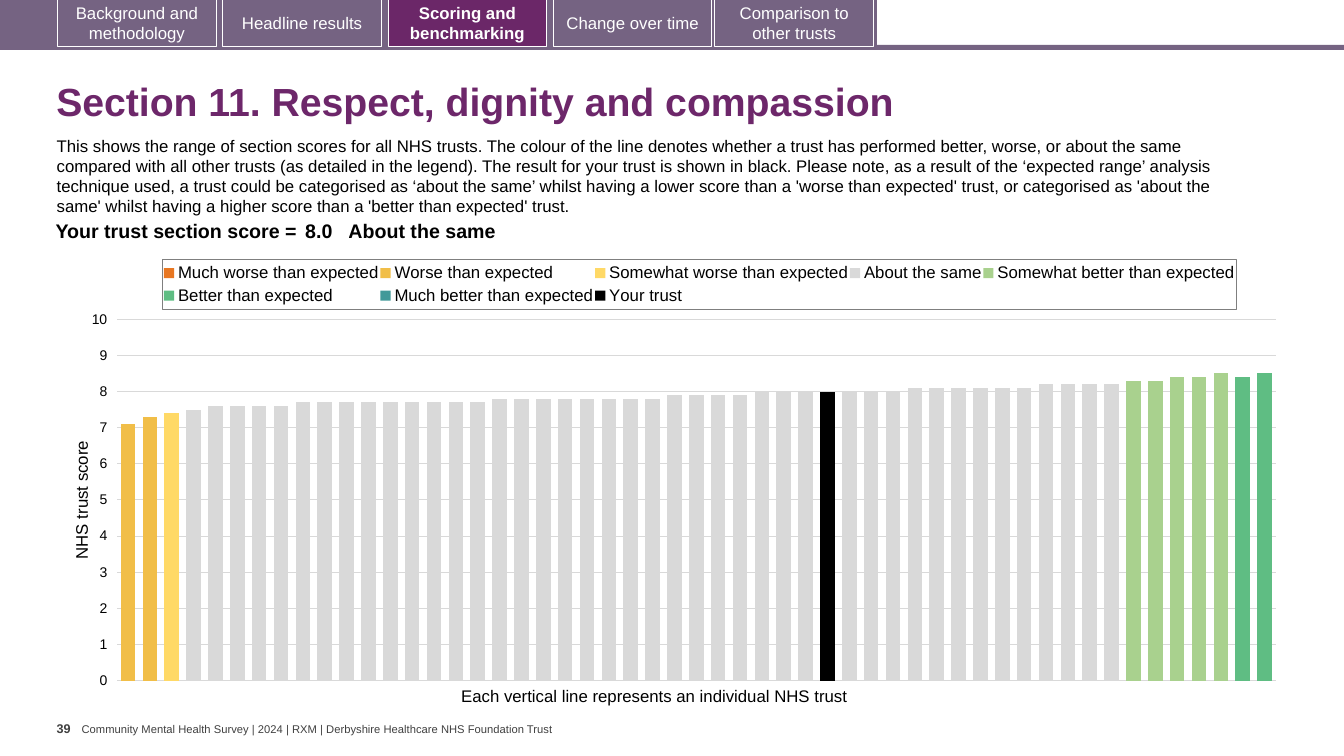
from copy import deepcopy
from lxml.etree import SubElement
from pptx import Presentation
from pptx.chart.data import CategoryChartData
from pptx.dml.color import RGBColor
from pptx.enum.chart import (XL_CHART_TYPE, XL_LEGEND_POSITION, XL_TICK_LABEL_POSITION,
                             XL_TICK_MARK)
from pptx.enum.shapes import MSO_SHAPE
from pptx.enum.text import MSO_ANCHOR, PP_ALIGN
from pptx.oxml import parse_xml
from pptx.oxml.ns import nsdecls, qn
from pptx.util import Pt

PLUM, MAUVE, BLACK, WHITE, GREY = "6D276A", "756382", "000000", "FFFFFF", "404040"


def paint(fill, hue):
    fill.solid()
    fill.fore_color.rgb = RGBColor.from_string(hue)


def style(font, size, hue, bold=False):
    font.name, font.size, font.bold = "Arial", Pt(size), bold
    paint(font.fill, hue)


deck = Presentation()
deck.slide_width, deck.slide_height = Pt(960), Pt(540)
slide = deck.slides.add_slide(deck.slide_layouts[5])
shapes = slide.shapes

# Navigation strip and tabs
bands = [(0, 32, 960, 3.6), (0, 0, 626.4, 33.8)]
for band in bands:
    strip = shapes.add_shape(MSO_SHAPE.RECTANGLE, *map(Pt, band))
    strip.shadow.inherit = False
    paint(strip.fill, MAUVE)
    strip.line.fill.background()

tabs = [
    (41.2, "Background and methodology"),
    (159.2, "Headline results"),
    (277.2, "Scoring and benchmarking"),
    (395.3, "Change over time"),
    (510.7, "Comparison to other trusts"),
]
for left, label in tabs:
    active = label == "Scoring and benchmarking"
    tab = shapes.add_shape(MSO_SHAPE.RECTANGLE, Pt(left), Pt(-0.7), Pt(113.3), Pt(33.8))
    tab.shadow.inherit = False
    paint(tab.fill, "6B2768" if active else MAUVE)
    paint(tab.line.fill, WHITE)
    tab.line.width = Pt(0.75)
    tab.text_frame.vertical_anchor = MSO_ANCHOR.MIDDLE
    para = tab.text_frame.paragraphs[0]
    para.alignment = PP_ALIGN.CENTER
    run = para.add_run()
    run.text = label
    style(run.font, 12, WHITE, active)

# Title
title = shapes.title
title.left, title.top, title.width, title.height = Pt(33), Pt(48.2), Pt(899), Pt(52)
title.text_frame.vertical_anchor = MSO_ANCHOR.MIDDLE
para = title.text_frame.paragraphs[0]
para.alignment = PP_ALIGN.LEFT
para.line_spacing = 0.9
run = para.add_run()
run.text = "Section 11. Respect, dignity and compassion"
style(run.font, 28, PLUM, True)

# Chart
trusts = 53
same = ([7.5] + [7.6] * 4 + [7.7] * 9 + [7.8] * 8 + [7.9] * 4
        + [8.0] * 7 + [8.1] * 6 + [8.2] * 4)
# Name, colour, number of trusts before the first bar, scores
groups = [
    ("Much worse than expected", "E87722", 0, []),
    ("Worse than expected", "F1BE48", 0, [7.1, 7.3]),
    ("Somewhat worse than expected", "FFD966", 2, [7.4]),
    ("About the same", "D9D9D9", 3, same),
    ("Somewhat better than expected", "A9D18E", 46, [8.3, 8.3, 8.4, 8.4, 8.5]),
    ("Better than expected", "5FBD83", 51, [8.4, 8.5]),
    ("Much better than expected", "419999", 0, []),
    ("Your trust", BLACK, 32, [8.0]),
]
data = CategoryChartData()
data.categories = [str(n + 1) for n in range(trusts)]
for name, hue, start, scores in groups:
    rest = trusts - start - len(scores)
    data.add_series(name, [None] * start + scores + [None] * rest)
chart = shapes.add_chart(XL_CHART_TYPE.COLUMN_CLUSTERED,
                         Pt(48.6), Pt(177.6), Pt(874.8), Pt(319.6), data).chart
style(chart.font, 10, BLACK)
chart.has_title = False
plot = chart.plots[0]
plot.gap_width, plot.overlap, plot.vary_by_categories = 50, 100, False
for series, group in zip(plot.series, groups):
    paint(series.format.fill, group[1])
    series.invert_if_negative = False

chart.category_axis.visible = False
axis = chart.value_axis
axis.minimum_scale, axis.maximum_scale, axis.major_unit = 0, 10, 1
axis.major_tick_mark = axis.minor_tick_mark = XL_TICK_MARK.NONE
axis.tick_label_position = XL_TICK_LABEL_POSITION.LOW
axis.format.line.fill.background()
style(axis.tick_labels.font, 10, BLACK)
axis.tick_labels.number_format = "0"
axis.tick_labels.number_format_is_linked = False
grid = axis.major_gridlines.format.line
paint(grid.fill, "D9D9D9")
grid.width = Pt(0.75)
run = axis.axis_title.text_frame.paragraphs[0].add_run()
run.text = "NHS trust score"
style(run.font, 12, BLACK)

chart.has_legend = True
legend = chart.legend
legend.position = XL_LEGEND_POSITION.TOP
legend.include_in_layout = False
style(legend.font, 12, BLACK)

# "Your trust" stands on a second, unlabelled axis
area = chart.element.find(".//" + qn("c:plotArea"))
bars = area.find(qn("c:barChart"))
second = deepcopy(bars)
for ser in second.findall(qn("c:ser"))[:-1]:
    second.remove(ser)
bars.remove(bars.findall(qn("c:ser"))[-1])
bars.addnext(second)
cats, vals = area.find(qn("c:catAx")), area.find(qn("c:valAx"))
right, base = deepcopy(vals), deepcopy(cats)
for tag in ("majorGridlines", "title"):
    right.remove(right.find(qn("c:" + tag)))
for tag, value in [("axPos", "r"), ("tickLblPos", "none"), ("crosses", "max")]:
    right.find(qn("c:" + tag)).set("val", value)
vals.addnext(right)
right.addnext(base)
ids = {cats.find(qn("c:axId")).get("val"): "5001", vals.find(qn("c:axId")).get("val"): "5002"}
for part in (second, right, base):
    for tag in ("axId", "crossAx"):
        for link in part.findall(qn("c:" + tag)):
            link.set("val", ids[link.get("val")])

# Fixed places for the plot and the legend, as shares of the chart
key = chart.element.find(".//" + qn("c:legend"))
places = [
    (area, 0, [("layoutTarget", "inner")], (0.04, 0.158, 0.946, 0.808)),
    (key, 1, [], (0.077, 0.025, 0.877, 0.11)),
]
for host, index, target, spot in places:
    for old in host.findall(qn("c:layout")):
        host.remove(old)
    layout = parse_xml(f"<c:layout {nsdecls('c')}><c:manualLayout/></c:layout>")
    modes = [("xMode", "edge"), ("yMode", "edge")]
    for tag, value in target + modes + list(zip("xywh", spot)):
        SubElement(layout[0], qn("c:" + tag)).set("val", str(value))
    host.insert(index, layout)
key.find(qn("c:txPr")).addprevious(parse_xml(
    f"<c:spPr {nsdecls('c', 'a')}><a:ln w='9525'><a:solidFill>"
    "<a:srgbClr val='7F7F7F'/></a:solidFill></a:ln></c:spPr>"))

# Score table
table = shapes.add_table(1, 3, Pt(25.7), Pt(154.8), Pt(842), Pt(22.3)).table
table.first_row = table.horz_banding = False
cells = [
    ("Your trust section score =", 189.4, 2.9, PP_ALIGN.RIGHT),
    ("8.0", 33.8, 2.9, PP_ALIGN.LEFT),
    ("About the same", 618.5, 0, PP_ALIGN.LEFT),
]
for col, (words, width, side, align) in enumerate(cells):
    table.columns[col].width = Pt(width)
    cell = table.cell(0, col)
    cell.fill.background()
    cell.margin_left = cell.margin_right = Pt(side)
    cell.margin_top = cell.margin_bottom = Pt(2.9)
    para = cell.text_frame.paragraphs[0]
    para.alignment = align
    run = para.add_run()
    run.text = words
    style(run.font, 14, BLACK, True)

# Plain text: place, size, colour, weight, words
intro = (
    "This shows the range of section scores for all NHS trusts. The colour of the line "
    "denotes whether a trust has performed better, worse, or about the same compared with "
    "all other trusts (as detailed in the legend). The result for your trust is shown in "
    "black. Please note, as a result of the ‘expected range’ analysis technique used, a "
    "trust could be categorised as ‘about the same’ whilst having a lower score than a "
    "'worse than expected' trust, or categorised as 'about the same' whilst having a higher "
    "score than a 'better than expected' trust."
)
notes = [
    ((40.5, 96.8, 859, 58), 12, BLACK, False, intro),
    ((329.4, 489.6, 290, 15), 12, BLACK, False,
     "Each vertical line represents an individual NHS trust"),
    ((40.4, 514.8, 16, 12), 9, GREY, True, "39"),
    ((58.3, 515.8, 360, 10), 8, GREY, False,
     "Community Mental Health Survey | 2024 | RXM | Derbyshire Healthcare NHS Foundation Trust"),
]
for place, size, hue, bold, words in notes:
    frame = shapes.add_textbox(*map(Pt, place)).text_frame
    frame.word_wrap = True
    frame.margin_left = frame.margin_right = frame.margin_top = frame.margin_bottom = 0
    run = frame.paragraphs[0].add_run()
    run.text = words
    style(run.font, size, hue, bold)

deck.save("out.pptx")
